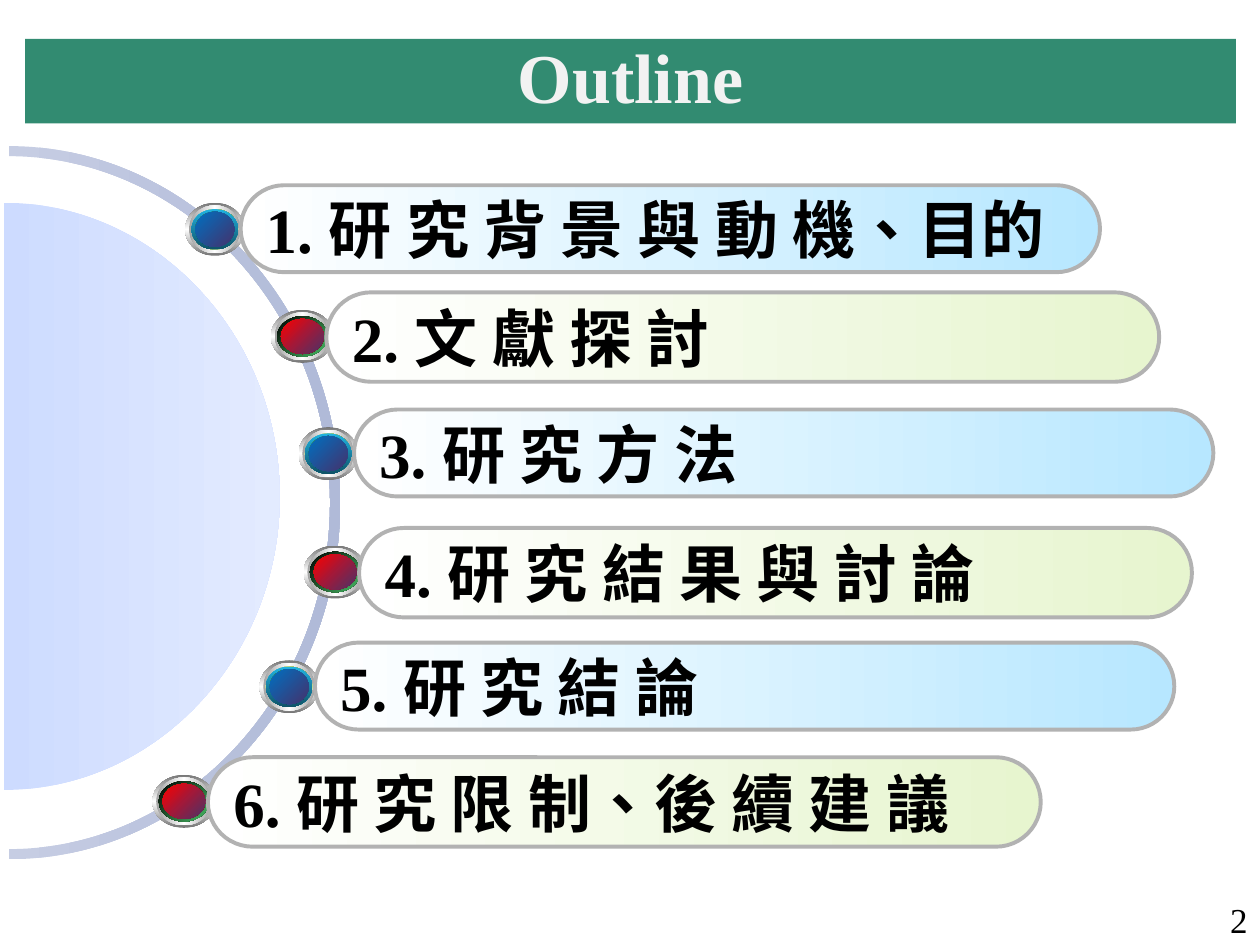
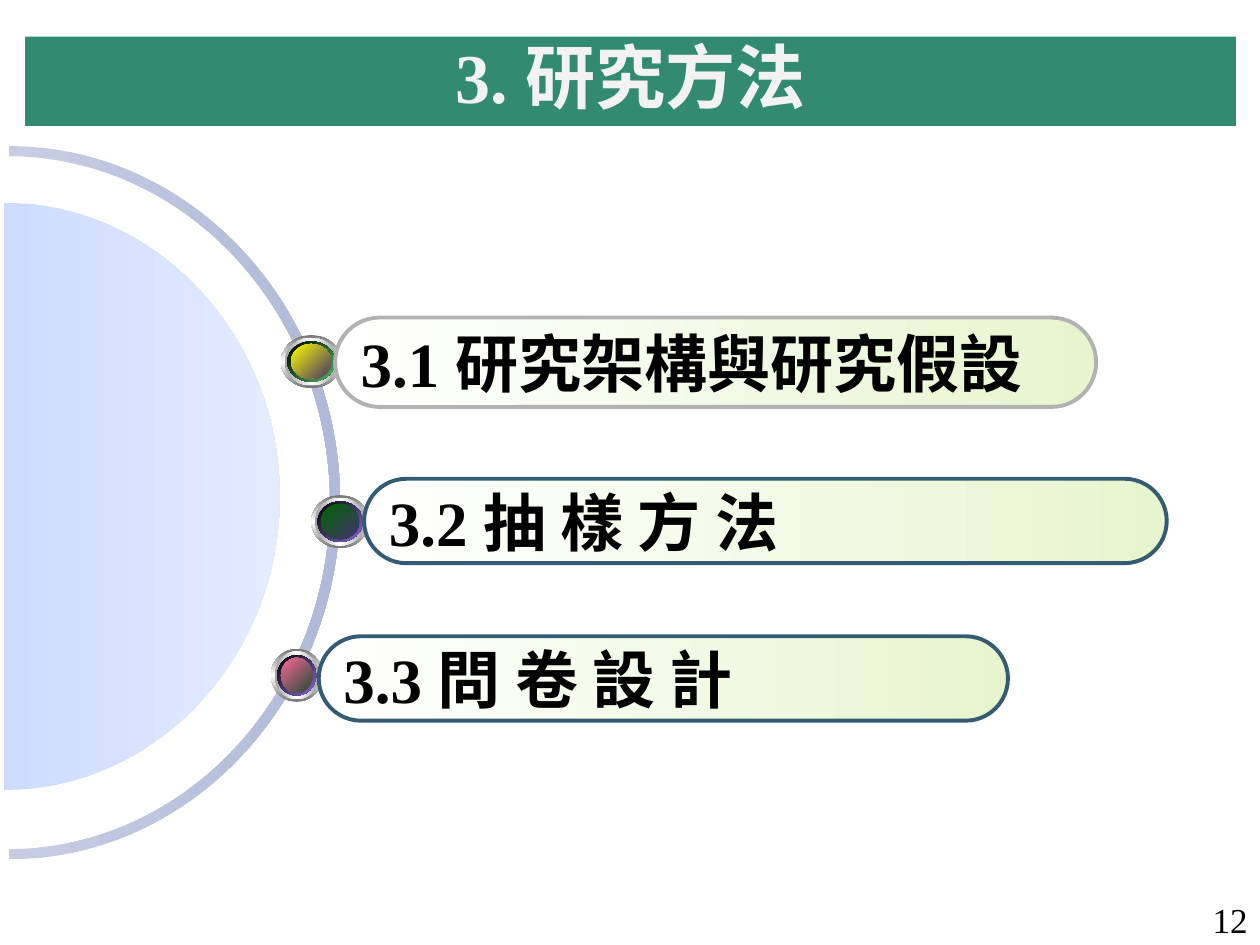
from dataclasses import dataclass

from lxml.etree import SubElement
from pptx import Presentation
from pptx.dml.color import RGBColor
from pptx.enum.shapes import MSO_SHAPE
from pptx.enum.text import MSO_ANCHOR, PP_ALIGN
from pptx.oxml.ns import qn
from pptx.util import Inches, Pt


@dataclass(frozen=True)
class Theme:
    """Colours, fonts and type sizes shared by the slides."""
    latin: str = "Times New Roman"
    cjk: str = "Noto Sans CJK SC"
    title_size: int = 40
    entry_size: int = 36
    number_size: int = 20
    band: str = "328B71"
    title: str = "F2F2F2"
    ink: str = "000000"
    grey_line: str = "B2B2B2"
    navy_line: str = "335B74"
    arc: tuple = ("C6CDE3", "B0BAD8")
    dome: tuple = ("CDDBFF", "E3EBFF")
    sky: tuple = ("FFFFFF", "B7E7FF")
    lime: tuple = ("FFFFFF", "E7F5CF")
    outer_ring: tuple = ("767676", "FFFFFF", "767676")
    inner_ring: tuple = ("A2A2A2", "FFFFFF", "A2A2A2")
    glint: tuple = ("FFFFFF", "6EAC1C", "FFFFFF")
    seat: tuple = ("548415", "6EAC1C", "548415")
    teal_rim: tuple = ("21B3E1", "0F5368")
    green_rim: tuple = ("000000", "48BE67")
    violet_rim: tuple = ("000000", "8D67E1")
    blue: tuple = ("0070C0", "45326D")
    red: tuple = ("FF0000", "D10C1B", "A2193A", "762651", "45326D")
    yellow: tuple = ("FFFF00", "45326D")
    green: tuple = ("006600", "224C36", "45326D")
    pink: tuple = ("FF6699", "224C36")


THEME = Theme()


@dataclass(frozen=True)
class Look:
    """Size and colouring of one entry's capsule and bead."""
    width: float
    height: float
    capsule: tuple
    outline: str
    bead_width: float
    bead_lead: float
    bead_drop: float
    rim: tuple
    core: tuple
    rim_angle: int = 45


BLUE = Look(6.82, 0.69, THEME.sky, THEME.grey_line, 0.47, 0.44, 0.14,
            THEME.teal_rim, THEME.blue, 90)
RED = Look(6.61, 0.71, THEME.lime, THEME.grey_line, 0.5, 0.44, 0.14,
           THEME.green_rim, THEME.red)
YELLOW = Look(6.04, 0.71, THEME.lime, THEME.grey_line, 0.48, 0.43, 0.14,
              THEME.green_rim, THEME.yellow)
GREEN = Look(6.37, 0.67, THEME.lime, THEME.navy_line, 0.46, 0.42, 0.13,
             THEME.violet_rim, THEME.green)
PINK = Look(5.47, 0.67, THEME.lime, THEME.navy_line, 0.41, 0.38, 0.1,
            THEME.violet_rim, THEME.pink)

OUTLINE = [
    ("1. ", "研 究 背 景 與 動 機、目的", 1.91, 1.47, BLUE),
    ("2. ", "文 獻 探 討", 2.59, 2.32, RED),
    ("3. ", "研 究 方 法", 2.81, 3.25, BLUE),
    ("4. ", "研 究 結 果 與 討 論", 2.85, 4.19, RED),
    ("5. ", "研 究 結 論", 2.5, 5.1, BLUE),
    ("6. ", "研 究 限 制、後 續 建 議", 1.65, 6.01, RED),
]
METHODS = [
    ("3.1 ", "研究架構與研究假設", 2.66, 2.52, YELLOW),
    ("3.2 ", "抽 樣 方 法", 2.89, 3.8, GREEN),
    ("3.3 ", "問 卷 設 計", 2.53, 5.05, PINK),
]
BEAD_HEIGHT = 0.42
QUARTER_HANDLE = 0.55


def write(shape, *pieces, size, color, bold=False, align=PP_ALIGN.LEFT, spacing=None, wrap=True):
    """Write the pieces as runs of one vertically centred paragraph."""
    frame = shape.text_frame
    frame.word_wrap = wrap
    frame.vertical_anchor = MSO_ANCHOR.MIDDLE
    paragraph = frame.paragraphs[0]
    paragraph.alignment = align
    if spacing:
        paragraph.line_spacing = spacing
    for piece in pieces:
        run = paragraph.add_run()
        run.text = piece
        run.font.size = Pt(size)
        run.font.bold = bold
        run.font.color.rgb = RGBColor.from_string(color)
        run.font.name = THEME.latin if piece.isascii() else THEME.cjk
        properties = run.font._element
        properties.set("lang", "en-US" if piece.isascii() else "zh-TW")
        SubElement(properties, qn("a:ea")).set("typeface", THEME.cjk)


def paint(shape, colors, angle=0, outline=None):
    """Give a shape an evenly stepped gradient or a plain fill, and its outline."""
    shape.shadow.inherit = False
    if len(colors) == 1:
        shape.fill.solid()
        shape.fill.fore_color.rgb = RGBColor.from_string(colors[0])
    else:
        shape.fill.gradient()
        gradient = shape._element.spPr.find(qn("a:gradFill"))
        stops = gradient.find(qn("a:gsLst"))
        stops.clear()
        for step, color in enumerate(colors):
            stop = SubElement(stops, qn("a:gs"))
            stop.set("pos", str(100000 * step // (len(colors) - 1)))
            SubElement(stop, qn("a:srgbClr")).set("val", color)
        gradient.find(qn("a:lin")).set("ang", str(angle * 60000))
    if outline:
        shape.line.color.rgb = RGBColor.from_string(outline)
        shape.line.width = Pt(2.25)
    else:
        shape.line.fill.background()


def add_preset(shapes, kind, left, top, width, height, colors, **style):
    """Add a painted preset shape."""
    shape = shapes.add_shape(kind, Inches(left), Inches(top), Inches(width), Inches(height))
    paint(shape, colors, **style)
    return shape


def half_ellipse(center_x, center_y, radius_x, radius_y):
    """Return the Bezier points down the right half of an ellipse."""
    handle = QUARTER_HANDLE
    units = [(0, -1), (handle, -1), (1, -handle), (1, 0), (1, handle), (handle, 1), (0, 1)]
    return [(Inches(center_x + radius_x * x), Inches(center_y + radius_y * y)) for x, y in units]


def bend(segments):
    """Join three line segments into one cubic curve."""
    curve = segments[0].makeelement(qn("a:cubicBezTo"))
    segments[0].addprevious(curve)
    for segment in segments:
        curve.append(segment[0])
        segment.getparent().remove(segment)


def add_curved(shapes, colors, *halves):
    """Add a closed painted freeform made of half ellipses."""
    points = [point for half in halves for point in half]
    builder = shapes.build_freeform(*points[0])
    builder.add_line_segments(points[1:], close=True)
    shape = builder.convert_to_shape()
    segments = list(shape._element.iter(qn("a:lnTo")))
    for start in range(0, len(points), 7):
        bend(segments[start:start + 3])
        bend(segments[start + 3:start + 6])
    paint(shape, colors)


def add_dome(slide):
    """Add the half disc and the arc around it."""
    shapes = slide.shapes.add_group_shape().shapes
    outer = half_ellipse(0.07, 3.99, 2.63, 2.83)
    inner = half_ellipse(0.07, 3.99, 2.55, 2.75)
    add_curved(shapes, THEME.arc, outer, inner[::-1])
    add_curved(shapes, THEME.dome, half_ellipse(0.03, 3.94, 2.19, 2.33))


def add_bead(shapes, left, top, look):
    """Add the nested ellipses of a bead."""
    layers = [
        (0, 0, THEME.outer_ring, 90),
        (0.03, 0.02, THEME.inner_ring, 0),
        (0.05, 0.05, THEME.glint, 45),
        (0.05, 0.05, look.rim, look.rim_angle),
        (0.08, 0.07, THEME.seat, 315),
        (0.08, 0.07, look.core, 45),
    ]
    for inset_x, inset_y, colors, angle in layers:
        add_preset(shapes, MSO_SHAPE.OVAL, left + inset_x, top + inset_y,
                   look.bead_width - 2 * inset_x, BEAD_HEIGHT - 2 * inset_y,
                   colors, angle=angle)


def add_entry(slide, number, heading, left, top, look):
    """Add a bead with its numbered capsule."""
    shapes = slide.shapes.add_group_shape().shapes
    add_bead(shapes, left - look.bead_lead, top + look.bead_drop, look)
    capsule = add_preset(shapes, MSO_SHAPE.ROUNDED_RECTANGLE, left, top, look.width,
                         look.height, look.capsule, outline=look.outline)
    capsule.adjustments[0] = 0.5
    write(capsule, number, heading, size=THEME.entry_size, color=THEME.ink, bold=True, wrap=False)


def add_title(slide, pieces, top, height):
    """Add the title band."""
    band = add_preset(slide.shapes, MSO_SHAPE.RECTANGLE, 0.2, top, 9.61, height, (THEME.band,))
    band.text_frame.margin_top = band.text_frame.margin_bottom = 0
    write(band, *pieces, size=THEME.title_size, color=THEME.title, bold=True,
          align=PP_ALIGN.CENTER, spacing=0.9)


def add_page_number(slide, number):
    """Add the page number in the lower right corner."""
    corner = slide.shapes.add_textbox(Inches(7.75), Inches(7.1), Inches(2.25), Inches(0.4))
    write(corner, str(number), size=THEME.number_size, color=THEME.ink, align=PP_ALIGN.RIGHT)


def add_agenda(deck, title, top, height, number, entries):
    """Add one slide with title, dome and entries."""
    slide = deck.slides.add_slide(deck.slide_layouts[6])
    add_title(slide, title, top, height)
    add_page_number(slide, number)
    add_dome(slide)
    for entry in entries:
        add_entry(slide, *entry)


def main():
    """Build and save the deck."""
    deck = Presentation()
    deck.slide_width, deck.slide_height = Inches(10), Inches(7.5)
    add_agenda(deck, ["Outline"], 0.31, 0.67, 2, OUTLINE)
    add_agenda(deck, ["3. ", "研究方法"], 0.29, 0.71, 12, METHODS)
    deck.save("out.pptx")


if __name__ == "__main__":
    main()
